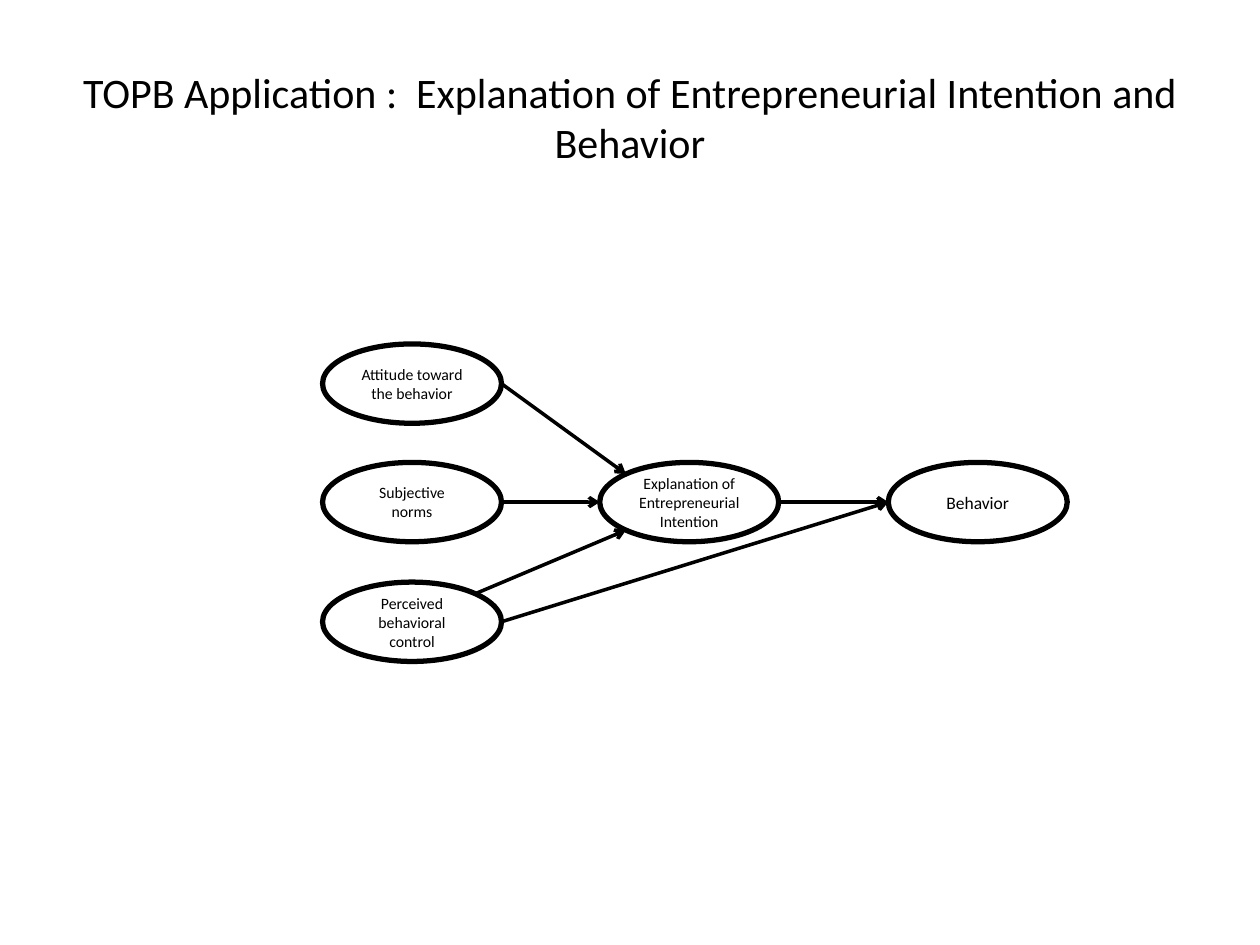
"""Build the TOPB slide that explains entrepreneurial intention and behavior."""
import math

from lxml import etree
from pptx import Presentation, util as u
from pptx.dml.color import RGBColor
from pptx.enum import shapes, text
from pptx.oxml.ns import qn

THEME = {
    "ink": RGBColor(0, 0, 0),
    "font": "Calibri",
    "title": 24,
    "factor": 9,
    "outcome": 10,
    "outline": 3,
    "arrow": 2,
}
WIDTH, HEIGHT = 1.42, 0.63
FRAME_FORMAT = {
    "word_wrap": True,
    "vertical_anchor": text.MSO_ANCHOR.MIDDLE,
    "margin_left": u.Inches(0.09),
    "margin_right": u.Inches(0.09),
}


def write(shape, wording, size):
    frame = shape.text_frame
    for key, value in FRAME_FORMAT.items():
        setattr(frame, key, value)
    paragraph = frame.paragraphs[0]
    paragraph.alignment = text.PP_ALIGN.CENTER
    run = paragraph.add_run()
    run.text = wording
    for key, value in {"name": THEME["font"], "size": u.Pt(THEME[size])}.items():
        setattr(run.font, key, value)
    run.font.color.rgb = THEME["ink"]


def rim_point(concept, degrees):
    left, top = concepts[concept][:2]
    angle = math.radians(degrees)
    x = left + WIDTH / 2 * (1 + math.cos(angle))
    y = top + HEIGHT / 2 * (1 - math.sin(angle))
    return u.Inches(x), u.Inches(y)


deck = Presentation()
deck.slide_width, deck.slide_height = u.Inches(10), u.Inches(7.5)
slide = deck.slides.add_slide(deck.slide_layouts[6])

title = slide.shapes.add_textbox(u.Inches(0.5), u.Inches(0.3), u.Inches(9), u.Inches(1.25))
write(title, "TOPB Application :  Explanation of Entrepreneurial Intention and Behavior", "title")

concepts = {
    "intention": (4.76, 3.67, "Explanation of Entrepreneurial Intention", "factor"),
    "behavior": (7.05, 3.67, "Behavior", "outcome"),
    "attitude": (2.56, 2.73, "Attitude toward the behavior", "factor"),
    "norms": (2.56, 3.67, "Subjective norms", "factor"),
    "control": (2.56, 4.62, "Perceived behavioral control", "factor"),
}
for left, top, wording, size in concepts.values():
    oval = slide.shapes.add_shape(
        shapes.MSO_SHAPE.OVAL, u.Inches(left), u.Inches(top), u.Inches(WIDTH), u.Inches(HEIGHT)
    )
    oval.shadow.inherit = False
    oval.fill.background()
    oval.line.color.rgb = THEME["ink"]
    oval.line.width = u.Pt(THEME["outline"])
    write(oval, wording, size)

influences = [
    ("control", 0, "behavior", 180),
    ("attitude", 0, "intention", 135),
    ("norms", 0, "intention", 180),
    ("control", 45, "intention", 225),
    ("intention", 0, "behavior", 180),
]
for cause, leaving, effect, arriving in influences:
    influence = slide.shapes.add_connector(
        shapes.MSO_CONNECTOR.STRAIGHT, *rim_point(cause, leaving), *rim_point(effect, arriving)
    )
    influence.line.color.rgb = THEME["ink"]
    influence.line.width = u.Pt(THEME["arrow"])
    etree.SubElement(influence.line._get_or_add_ln(), qn("a:tailEnd"), type="arrow")
    etree.SubElement(influence._element.spPr, qn("a:effectLst"))

deck.save("out.pptx")
